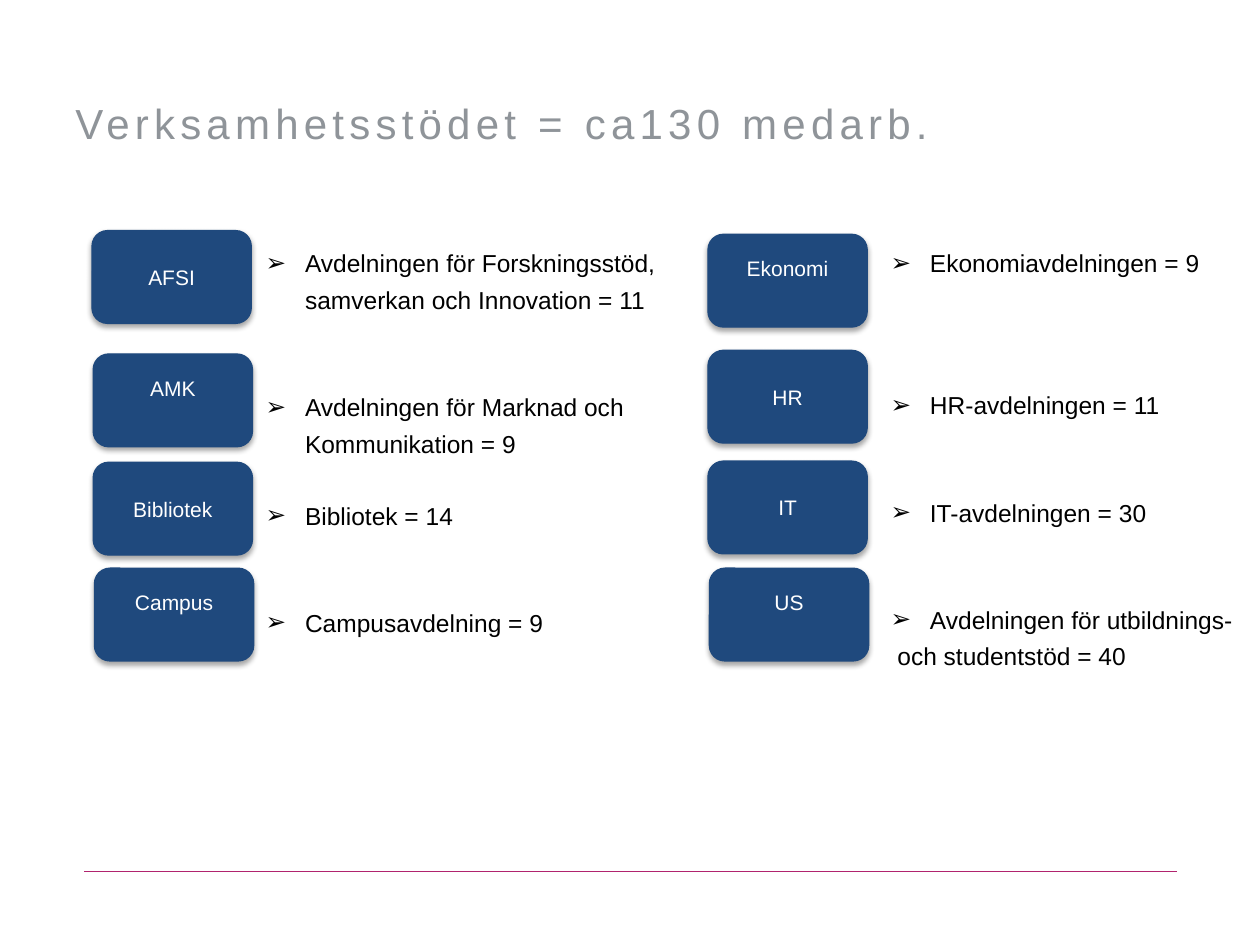
from lxml import etree
from pptx import Presentation
from pptx.dml.color import RGBColor
from pptx.enum import shapes, text
from pptx.oxml import ns
from pptx.util import Pt

COLORS = {"navy": "1F497D", "magenta": "B1236E", "grey": "8F9499",
          "white": "FFFFFF", "black": "000000"}
LINE_HEIGHT = 20.13
UNITS = [
    ("AFSI", 52.6, 131.8, False),
    ("AMK", 53.3, 202.3, True),
    ("Bibliotek", 53.3, 264.2, False),
    ("Campus", 54, 324.7, True),
    ("Ekonomi", 404.6, 133.9, True),
    ("HR", 404.6, 200.2, False),
    ("IT", 404.6, 263.5, False),
    ("US", 405.4, 324.7, True),
]
LEFT_LIST = [
    (["Avdelningen för Forskningsstöd,", "samverkan och Innovation = 11"], 0, True),
    (["Avdelningen för Marknad och Kommunikation = 9"], 2, True),
    (["Bibliotek = 14"], 1, True),
    (["Campusavdelning = 9"], 2, True),
]
RIGHT_LIST = [
    (["Ekonomiavdelningen = 9"], 0, True),
    (["HR-avdelningen = 11"], 3, True),
    (["IT-avdelningen = 30"], 2, True),
    (["Avdelningen för utbildnings-"], 2, True),
    (["och studentstöd = 40"], 0, False),
]


class SlideBuilder:
    font = "Arial"
    line_width = 0.75

    def __init__(self, page):
        self.page = page

    def color(self, name):
        return RGBColor.from_string(COLORS[name])

    def child(self, parent, tag, **attributes):
        return etree.SubElement(parent, ns.qn(tag), attributes)

    def span(self, para, words, size, color):
        span = para.add_run()
        span.text = words
        span.font.name = self.font
        span.font.size = Pt(size)
        span.font.color.rgb = self.color(color)
        return span

    def text_box(self, left, top, width, height):
        box = self.page.shapes.add_textbox(Pt(left), Pt(top), Pt(width), Pt(height))
        box.text_frame.word_wrap = True
        return box.text_frame

    def title(self, words, left, top, width, height):
        frame = self.text_box(left, top, width, height)
        frame.margin_top = Pt(6)
        span = self.span(frame.paragraphs[0], words, 24, "grey")
        span.font._element.set("spc", "300")

    def rule(self, left, right, top):
        rule = self.page.shapes.add_connector(
            shapes.MSO_CONNECTOR.STRAIGHT, Pt(left), Pt(top), Pt(right), Pt(top))
        rule.line.color.rgb = self.color("magenta")
        rule.line.width = Pt(self.line_width)
        self.child(rule._element.spPr, "a:effectLst")

    def unit(self, name, left, top, raised):
        box = self.page.shapes.add_shape(
            shapes.MSO_SHAPE.ROUNDED_RECTANGLE, Pt(left), Pt(top), Pt(91), Pt(53))
        box.fill.solid()
        box.fill.fore_color.rgb = self.color("navy")
        box.line.color.rgb = self.color("navy")
        box.line.width = Pt(self.line_width)
        self.shadow(box)
        frame = box.text_frame
        frame.word_wrap = True
        frame.vertical_anchor = text.MSO_ANCHOR.MIDDLE
        if raised:
            frame.margin_bottom = Pt(17.4)
        para = frame.paragraphs[0]
        para.alignment = text.PP_ALIGN.CENTER
        self.span(para, name, 12, "white")

    def shadow(self, box):
        effects = self.child(box._element.spPr, "a:effectLst")
        shadow = self.child(effects, "a:outerShdw", blurRad=str(Pt(3.1)),
                            dist=str(Pt(1.8)), dir="5400000", rotWithShape="0")
        tint = self.child(shadow, "a:srgbClr", val=COLORS["black"])
        self.child(tint, "a:alpha", val="35000")

    def bullet_list(self, items, left, top, width, height):
        frame = self.text_box(left, top, width, height)
        for index, (lines, gap, bulleted) in enumerate(items):
            para = frame.add_paragraph() if index else frame.paragraphs[0]
            self.indent(para, bulleted)
            para.line_spacing = 1.25
            if gap:
                para.space_before = Pt(gap * LINE_HEIGHT)
            for number, words in enumerate(lines):
                if number:
                    para.add_line_break()
                self.span(para, words, 14, "black")

    def indent(self, para, bulleted):
        properties = para._p.get_or_add_pPr()
        properties.set("marL", str(Pt(22.5 if bulleted else 3.9)))
        properties.set("indent", str(Pt(-22.5 if bulleted else 0)))
        if bulleted:
            self.child(properties, "a:buFont", typeface=self.font)
            self.child(properties, "a:buChar", char="➢")


def main():
    deck = Presentation()
    deck.slide_width, deck.slide_height = Pt(720), Pt(540)
    builder = SlideBuilder(deck.slides.add_slide(deck.slide_layouts[6]))
    builder.rule(48.2, 672.5, 498)
    builder.title("Verksamhetsstödet = ca130 medarb.", 36, 49.7, 648, 90)
    for unit in UNITS:
        builder.unit(*unit)
    builder.bullet_list(LEFT_LIST, 144.7, 133.9, 306, 230.4)
    builder.bullet_list(RIGHT_LIST, 501.8, 133.9, 306, 251.3)
    deck.save("out.pptx")


if __name__ == "__main__":
    main()
